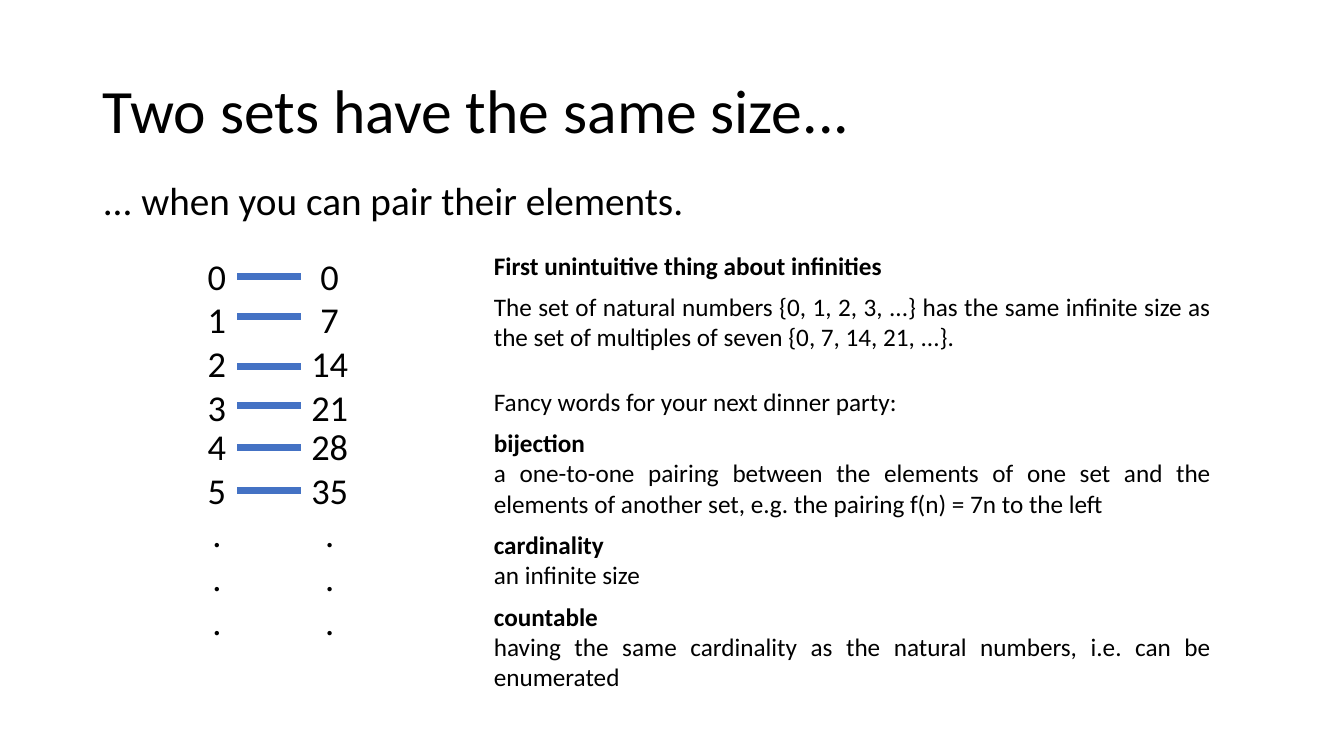
from lxml.etree import SubElement
from pptx import Presentation
from pptx.dml.color import RGBColor
from pptx.enum.shapes import MSO_CONNECTOR
from pptx.enum.text import MSO_ANCHOR, MSO_AUTO_SIZE, PP_ALIGN
from pptx.oxml.ns import qn
from pptx.util import Inches, Pt

SLIDE_WIDTH = Inches(13.33)
SLIDE_HEIGHT = Inches(7.5)
TEXT_COLOR = "000000"
LINK_COLOR = "4472C4"

TITLE_BOX = (6.9, 5.33, 86.27, 19.33)
SUBTITLE_BOX = (6.9, 23.33, 86.27, 9.07)
FIRST_PAIRS_BOX = (14.63, 32.93, 12.08, 24.67)
LATER_PAIRS_BOX = (14.63, 55.47, 12.08, 30.53)
STATEMENT_BOX = (36.01, 32.4, 54.84, 14.93)
GLOSSARY_BOX = (36.01, 50.4, 54.84, 42.13)

FIRST_PAIRS = [("0", "0"), ("1", "7"), ("2", "14"), ("3", "21")]
LATER_PAIRS = [("4", "28"), ("5", "35")] + [(".", ".")] * 3
FIRST_LINKS = (0.15, 0.36, 0.63, 0.84)
LATER_LINKS = (0.12, 0.31)

HEADING = {"space_after": Pt(8)}
TERM = {"space_before": Pt(8)}
STATEMENT = [
    ("First unintuitive thing about infinities", True, HEADING),
    ("The set of natural numbers {0, 1, 2, 3, ...} has the same infinite size as "
     "the set of multiples of seven {0, 7, 14, 21, ...}.", False, {}),
]
GLOSSARY = [
    ("Fancy words for your next dinner party:", False, {}),
    ("bijection", True, TERM),
    ("a one-to-one pairing between the elements of one set and the elements of "
     "another set, e.g. the pairing f(n) = 7n to the left", False, {}),
    ("cardinality", True, TERM),
    ("an infinite size", False, {}),
    ("countable", True, TERM),
    ("having the same cardinality as the natural numbers, i.e. can be enumerated",
     False, {}),
]


def color(hex_string):
    """Turn a hex string into a colour."""
    return RGBColor.from_string(hex_string)


def across(percent):
    """Convert a percentage of the slide width to a length."""
    return int(SLIDE_WIDTH * percent / 100)


def down(percent):
    """Convert a percentage of the slide height to a length."""
    return int(SLIDE_HEIGHT * percent / 100)


def to_lengths(box):
    """Convert a percentage box to left, top, width and height."""
    left, top, width, height = box
    return across(left), down(top), across(width), down(height)


def apply_format(target, values):
    """Set each attribute named in a dict of format values."""
    for name, value in values.items():
        setattr(target, name, value)


def write_paragraph(paragraph, text, size, bold=False, **values):
    """Write one formatted run into a paragraph."""
    run = paragraph.add_run()
    run.text = text
    apply_format(run.font, {"name": "Calibri", "size": Pt(size), "bold": bold})
    run.font.color.rgb = color(TEXT_COLOR)
    apply_format(paragraph, values)


def fill_placeholder(placeholder, box, text, size, anchor, space_before):
    """Move a placeholder and give it one plain line of text."""
    names = ("left", "top", "width", "height")
    apply_format(placeholder, dict(zip(names, to_lengths(box))))
    frame = placeholder.text_frame
    apply_format(frame, {"vertical_anchor": anchor, "auto_size": MSO_AUTO_SIZE.NONE})
    paragraph = frame.paragraphs[0]
    write_paragraph(paragraph, text, size, alignment=PP_ALIGN.LEFT,
                    line_spacing=0.9, space_before=Pt(space_before))
    properties = paragraph._p.get_or_add_pPr()
    properties.set("marL", "0")
    properties.set("indent", "0")
    SubElement(properties, qn("a:buNone"))


def add_text(slide, box, entries, size, alignment):
    """Add a text box with one paragraph for each entry."""
    frame = slide.shapes.add_textbox(*to_lengths(box)).text_frame
    apply_format(frame, {"word_wrap": True,
                         "auto_size": MSO_AUTO_SIZE.SHAPE_TO_FIT_TEXT})
    for index, (text, bold, spacing) in enumerate(entries):
        paragraph = frame.add_paragraph() if index else frame.paragraphs[0]
        write_paragraph(paragraph, text, size, bold, alignment=alignment, **spacing)


def add_link(slide, start, end, height):
    """Draw a thick horizontal line between two numbers."""
    link = slide.shapes.add_connector(
        MSO_CONNECTOR.STRAIGHT, across(start), down(height), across(end), down(height))
    link.line.color.rgb = color(LINK_COLOR)
    link.line.width = Pt(5)
    SubElement(link._element.spPr, qn("a:effectLst"))


def add_pairing(slide, box, pairs, link_shares):
    """Place two columns of numbers and the links between them."""
    left, top, width, height = box
    columns = ((0, 0.25), (0.64, 0.36))
    for (offset, share), numbers in zip(columns, zip(*pairs)):
        column_box = (left + offset * width, top, share * width, height)
        entries = [(number, False, {}) for number in numbers]
        add_text(slide, column_box, entries, 26, PP_ALIGN.CENTER)
    for share in link_shares:
        add_link(slide, left + 0.25 * width, left + 0.64 * width, top + share * height)


def build_slide(presentation):
    """Build the slide about sets of the same size."""
    slide = presentation.slides.add_slide(presentation.slide_layouts[1])
    title, body = slide.placeholders
    fill_placeholder(title, TITLE_BOX, "Two sets have the same size...", 44,
                     MSO_ANCHOR.MIDDLE, 0)
    fill_placeholder(body, SUBTITLE_BOX, "... when you can pair their elements.", 28,
                     MSO_ANCHOR.TOP, 10)
    add_pairing(slide, FIRST_PAIRS_BOX, FIRST_PAIRS, FIRST_LINKS)
    add_pairing(slide, LATER_PAIRS_BOX, LATER_PAIRS, LATER_LINKS)
    add_text(slide, STATEMENT_BOX, STATEMENT, 18, PP_ALIGN.JUSTIFY)
    add_text(slide, GLOSSARY_BOX, GLOSSARY, 18, PP_ALIGN.JUSTIFY)


def main():
    """Create and save the presentation."""
    presentation = Presentation()
    apply_format(presentation, {"slide_width": SLIDE_WIDTH,
                                "slide_height": SLIDE_HEIGHT})
    build_slide(presentation)
    presentation.save("out.pptx")


if __name__ == "__main__":
    main()
